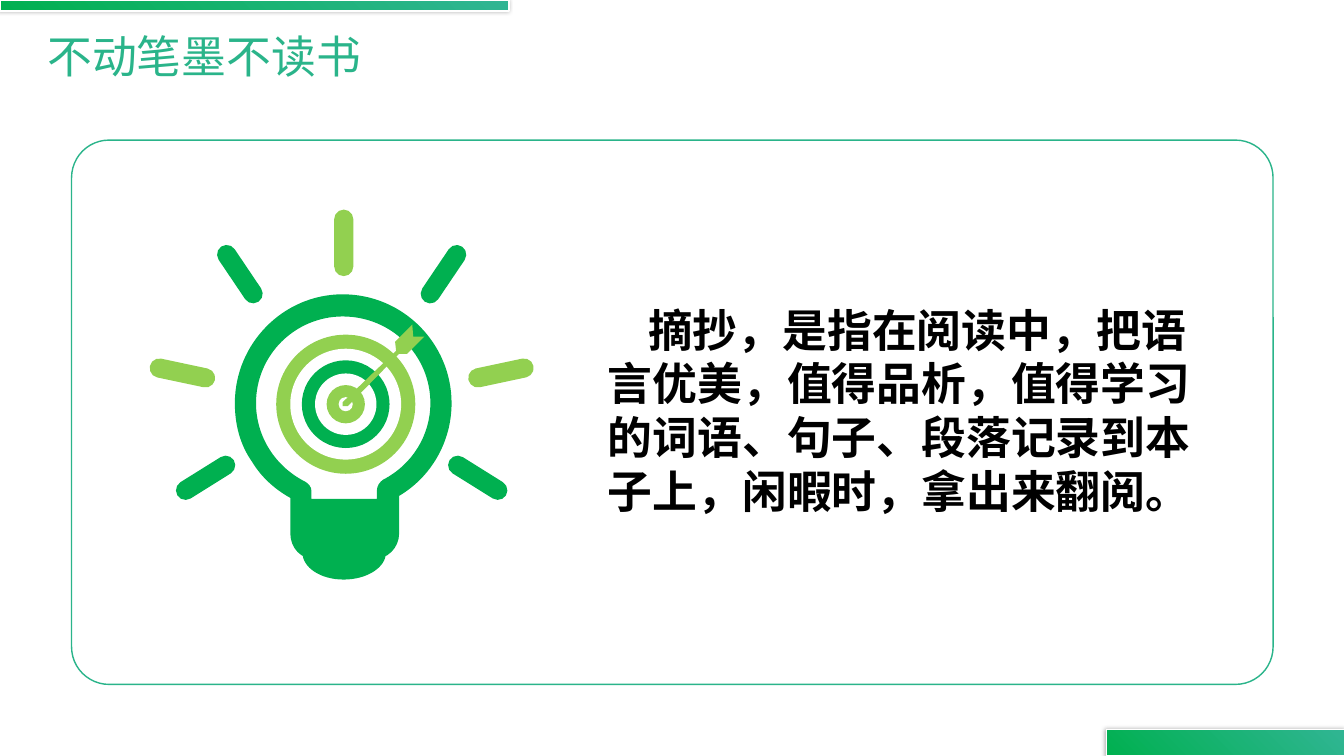
from dataclasses import dataclass

from lxml.etree import SubElement
from pptx import Presentation
from pptx.dml.color import RGBColor
from pptx.enum.shapes import MSO_SHAPE as Shape
from pptx.enum.text import MSO_ANCHOR as Anchor, MSO_AUTO_SIZE as AutoSize
from pptx.oxml.ns import qn
from pptx.util import Inches, Pt

Point = tuple[float, float]
Segment = list[Point]


@dataclass(frozen=True)
class Theme:
    teal: RGBColor = RGBColor.from_string("2AB48A")
    bar_teal: RGBColor = RGBColor.from_string("30B593")
    green: RGBColor = RGBColor.from_string("00B050")
    lime: RGBColor = RGBColor.from_string("92D050")
    white: RGBColor = RGBColor.from_string("FFFFFF")
    black: RGBColor = RGBColor.from_string("000000")
    font: str = "Arial"
    text_size: Pt = Pt(32)


@dataclass(frozen=True)
class Box:
    left: float
    top: float
    width: float
    height: float

    def lengths(self) -> list[Inches]:
        return [Inches(v) for v in (self.left, self.top, self.width, self.height)]


@dataclass(frozen=True)
class Ray:
    x: float
    y: float
    length: float
    angle: float
    color: RGBColor


@dataclass(frozen=True)
class Disc:
    diameter: float
    color: RGBColor


@dataclass(frozen=True)
class Contour:
    start: Point
    segments: list[Segment]


@dataclass(frozen=True)
class TextBlock:
    text: str
    box: Box
    frame_format: dict
    paragraph_format: dict
    font_format: dict


THEME = Theme()
BARS = [Box(0, 0, 5.05, 0.11), Box(10.98, 7.24, 2.36, 0.26)]
FRAME = Box(0.71, 1.39, 11.92, 5.4)
FRAME_ROUNDING = 0.069

RAY_WIDTH = 0.19
RAY_AXIS = 3.39
RAY_PAIRS = [
    Ray(1.35, 4.74, 0.66, 32, THEME.green),
    Ray(1.58, 3.7, 0.66, -12, THEME.lime),
    Ray(1.01, 2.72, 0.66, -56, THEME.green),
]
TOP_RAY = Ray(3.41, 2.41, 0.66, 90, THEME.lime)

SOCKET = Contour((3.83, 5.48), [
    [(3.83, 5.63), (3.64, 5.75), (3.41, 5.75)],
    [(3.18, 5.75), (3, 5.63), (3, 5.48)],
])
GLASS = Contour((3.4, 2.92), [
    [(2.81, 2.92), (2.33, 3.41), (2.33, 4)],
    [(2.33, 4.21), (2.38, 4.41), (2.5, 4.58)],
    [(2.59, 4.73), (2.72, 4.85), (2.88, 4.94)],
    [(2.88, 5.29)],
    [(2.88, 5.44), (2.99, 5.55), (3.13, 5.55)],
    [(3.7, 5.55)],
    [(3.84, 5.55), (3.96, 5.44), (3.96, 5.29)],
    [(3.96, 4.92)],
    [(4.28, 4.73), (4.48, 4.38), (4.48, 4)],
    [(4.48, 3.41), (4, 2.92), (3.4, 2.92)],
])
HOLLOW = Contour((3.8, 4.76), [
    [(3.77, 4.78), (3.74, 4.82), (3.74, 4.86)],
    [(3.74, 4.95)],
    [(3.09, 4.95)],
    [(3.09, 4.87)],
    [(3.09, 4.83), (3.06, 4.8), (3.03, 4.78)],
    [(2.73, 4.63), (2.54, 4.33), (2.54, 4)],
    [(2.54, 3.52), (2.93, 3.14), (3.4, 3.14)],
    [(3.88, 3.14), (4.27, 3.52), (4.27, 4)],
    [(4.27, 4.32), (4.09, 4.61), (3.8, 4.76)],
])
DART = Contour((3.96, 3.51), [
    [point] for point in (
        (4.04, 3.51), (4.21, 3.34), (4.1, 3.34), (4.09, 3.22), (3.92, 3.39),
        (3.93, 3.48), (3.4, 3.99), (3.4, 4.03), (3.45, 4.03),
    )
])

TARGET_CENTER = (3.43, 4.01)
TARGET = [
    Disc(1.38, THEME.lime),
    Disc(1.1, THEME.white),
    Disc(0.87, THEME.green),
    Disc(0.61, THEME.white),
    Disc(0.38, THEME.lime),
    Disc(0.14, THEME.white),
]

TEXTS = [
    TextBlock(
        "不动笔墨不读书",
        Box(0.37, 0.31, 3.61, 0.55),
        {"word_wrap": True, "vertical_anchor": Anchor.MIDDLE},
        {"line_spacing": 0.9},
        {"bold": False},
    ),
    TextBlock(
        "摘抄，是指在阅读中，把语言优美，值得品析，值得学习的词语、句子、段落记录到本子上，闲暇时，拿出来翻阅。",
        Box(6.03, 3, 5.97, 2.15),
        {
            "word_wrap": True, "auto_size": AutoSize.SHAPE_TO_FIT_TEXT,
            "margin_left": 0, "margin_top": 0, "margin_right": 0, "margin_bottom": 0,
        },
        {"space_after": Pt(6)},
        {"bold": True},
    ),
]
BODY_INDENT = Inches(0.4)


def apply(target, values: dict) -> None:
    for name, value in values.items():
        setattr(target, name, value)


def paint(shape, color: RGBColor) -> None:
    shape.shadow.inherit = False
    shape.fill.solid()
    shape.fill.fore_color.rgb = color
    shape.line.fill.background()


def add_outline(shapes, contours: list[Contour], color: RGBColor) -> None:
    builder = shapes.build_freeform(*map(Inches, contours[0].start))
    for number, contour in enumerate(contours):
        if number:
            builder.move_to(*map(Inches, contour.start))
        points = [tuple(map(Inches, point)) for segment in contour.segments for point in segment]
        builder.add_line_segments(points, close=True)
    shape = builder.convert_to_shape()
    lines = shape._element.spPr.iter(qn("a:lnTo"))
    remaining = iter(list(lines))
    for contour in contours:
        for segment in contour.segments:
            first, *others = [next(remaining) for _ in segment]
            if others:
                first.tag = qn("a:cubicBezTo")
            for line in others:
                first.append(line[0])
                line.getparent().remove(line)
    paint(shape, color)


def add_bar(shapes, box: Box) -> None:
    shape = shapes.add_shape(Shape.RECTANGLE, *box.lengths())
    shape.fill.gradient()
    shape.fill.gradient_angle = 45
    for stop, color in zip(shape.fill.gradient_stops, (THEME.green, THEME.bar_teal)):
        stop.color.rgb = color
    shape.line.color.rgb = THEME.white
    shape.line.width = Pt(1)
    shape.shadow.inherit = False
    effects = shape._element.spPr.find(qn("a:effectLst"))
    shadow = SubElement(
        effects, qn("a:outerShdw"),
        blurRad=str(Pt(3)), dist=str(Pt(1)), dir="10800000", rotWithShape="0",
    )
    color = SubElement(shadow, qn("a:srgbClr"), val=str(THEME.black))
    SubElement(color, qn("a:alpha"), val="30000")


def add_frame(shapes) -> None:
    shape = shapes.add_shape(Shape.ROUNDED_RECTANGLE, *FRAME.lengths())
    shape.adjustments[0] = FRAME_ROUNDING
    shape.shadow.inherit = False
    shape.fill.background()
    shape.line.color.rgb = THEME.teal
    shape.line.width = Pt(1)


def add_ray(shapes, ray: Ray) -> None:
    box = Box(ray.x - ray.length / 2, ray.y - RAY_WIDTH / 2, ray.length, RAY_WIDTH)
    shape = shapes.add_shape(Shape.ROUNDED_RECTANGLE, *box.lengths())
    shape.adjustments[0] = 0.5
    shape.rotation = ray.angle
    paint(shape, ray.color)


def add_disc(shapes, disc: Disc) -> None:
    radius = disc.diameter / 2
    x, y = TARGET_CENTER
    box = Box(x - radius, y - radius, disc.diameter, disc.diameter)
    paint(shapes.add_shape(Shape.OVAL, *box.lengths()), disc.color)


def add_text(shapes, block: TextBlock, color: RGBColor, indent: int) -> None:
    frame = shapes.add_textbox(*block.box.lengths()).text_frame
    apply(frame, block.frame_format)
    paragraph = frame.paragraphs[0]
    apply(paragraph, block.paragraph_format)
    paragraph._p.get_or_add_pPr().set("indent", str(indent))
    run = paragraph.add_run()
    run.text = block.text
    apply(run.font, {"name": THEME.font, "size": THEME.text_size, **block.font_format})
    run.font.color.rgb = color


def main() -> None:
    presentation = Presentation()
    apply(presentation, {"slide_width": Inches(40 / 3), "slide_height": Inches(7.5)})
    shapes = presentation.slides.add_slide(presentation.slide_layouts[6]).shapes
    for bar in BARS:
        add_bar(shapes, bar)
    add_frame(shapes)
    for ray in RAY_PAIRS:
        for side in (1, -1):
            add_ray(shapes, Ray(RAY_AXIS + side * ray.x, ray.y, ray.length, side * ray.angle, ray.color))
    add_ray(shapes, TOP_RAY)
    add_outline(shapes, [SOCKET], THEME.green)
    add_outline(shapes, [GLASS, HOLLOW], THEME.green)
    for disc in TARGET:
        add_disc(shapes, disc)
    add_outline(shapes, [DART], THEME.lime)
    for block, color, indent in zip(TEXTS, (THEME.teal, THEME.black), (0, BODY_INDENT)):
        add_text(shapes, block, color, indent)
    presentation.save("out.pptx")


if __name__ == "__main__":
    main()
